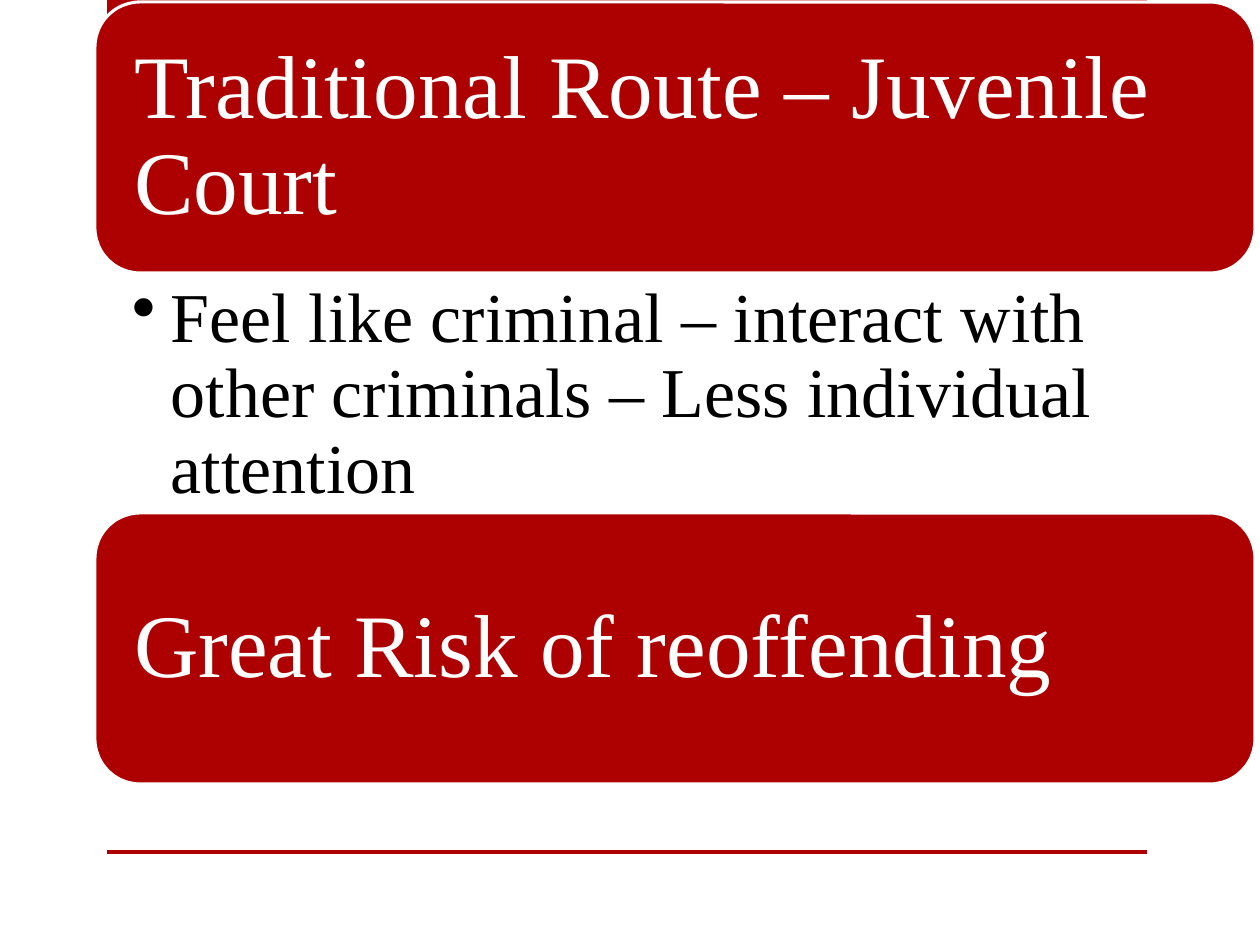
from lxml import etree
from pptx import Presentation
from pptx.dml.color import RGBColor
from pptx.enum.shapes import MSO_SHAPE
from pptx.enum.text import MSO_ANCHOR, PP_ALIGN
from pptx.oxml.ns import qn
from pptx.util import Emu, Pt

RECT = MSO_SHAPE.RECTANGLE
ROUNDED = MSO_SHAPE.ROUNDED_RECTANGLE
MIDDLE = MSO_ANCHOR.MIDDLE
TOP = MSO_ANCHOR.TOP
LEFT = PP_ALIGN.LEFT

FONT = "Times New Roman"
COLORS = {"red": "AD0101", "white": "FFFFFF", "black": "000000"}

CARD_LEFT, CARD_WIDTH, CARD_HEIGHT = 95, 1160, 271
BULLET_HEIGHT = 240
BAR_LEFT, BAR_WIDTH = 107, 1040


def px(n):
    """Turn whole pixels into EMU."""
    return Emu(round(n * 914400 / 126))


def color(name):
    """Look up a colour by name."""
    return RGBColor.from_string(COLORS[name])


def add_red_shape(slide, kind, x, y, w, h):
    """Add a red shape without line or shadow."""
    sp = slide.shapes.add_shape(kind, px(x), px(y), px(w), px(h))
    sp.shadow.inherit = False
    sp.fill.solid()
    sp.fill.fore_color.rgb = color("red")
    sp.line.fill.background()
    return sp


def set_text(sp, text, size, font_color, anchor, insets):
    """Write one left-aligned paragraph and return it."""
    tf = sp.text_frame
    tf.word_wrap = True
    tf.vertical_anchor = anchor
    tf.margin_left, tf.margin_top, tf.margin_right, tf.margin_bottom = map(px, insets)
    p = tf.paragraphs[0]
    p.text = text
    p.alignment = LEFT
    p.line_spacing = 0.9
    p.font.name = FONT
    p.font.size = Pt(size)
    p.font.color.rgb = color(font_color)
    return p


def add_card(slide, y, text):
    """Add a rounded heading card."""
    sp = add_red_shape(slide, ROUNDED, CARD_LEFT, y, CARD_WIDTH, CARD_HEIGHT)
    sp.line.color.rgb = color("white")
    sp.line.width = Pt(1.75)
    set_text(sp, text, 51, "white", MIDDLE, (26, 26, 26, 26))


def add_bullet(slide, y, text):
    """Add a bulleted text box below a card."""
    sp = slide.shapes.add_textbox(px(CARD_LEFT), px(y), px(CARD_WIDTH), px(BULLET_HEIGHT))
    p = set_text(sp, text, 40, "black", TOP, (37, 9, 50, 9))
    p.level = 1
    pPr = p._p.get_or_add_pPr()
    pPr.set("marL", str(px(39)))
    pPr.set("indent", str(-px(39)))
    bullet = etree.Element(qn("a:buChar"), char="•")
    pPr.find(qn("a:lnSpc")).addnext(bullet)


def main():
    """Build the slide and save it."""
    prs = Presentation()
    prs.slide_width, prs.slide_height = px(1260), px(945)
    slide = prs.slides.add_slide(prs.slide_layouts[6])

    for y, h in ((0, 53), (850, 4)):
        add_red_shape(slide, RECT, BAR_LEFT, y, BAR_WIDTH, h)

    y = 2
    add_card(slide, y, "Traditional Route – Juvenile Court")
    y += CARD_HEIGHT
    add_bullet(slide, y, "Feel like criminal – interact with other criminals – Less individual attention")
    y += BULLET_HEIGHT
    add_card(slide, y, "Great Risk of reoffending")

    prs.save("out.pptx")


if __name__ == "__main__":
    main()
